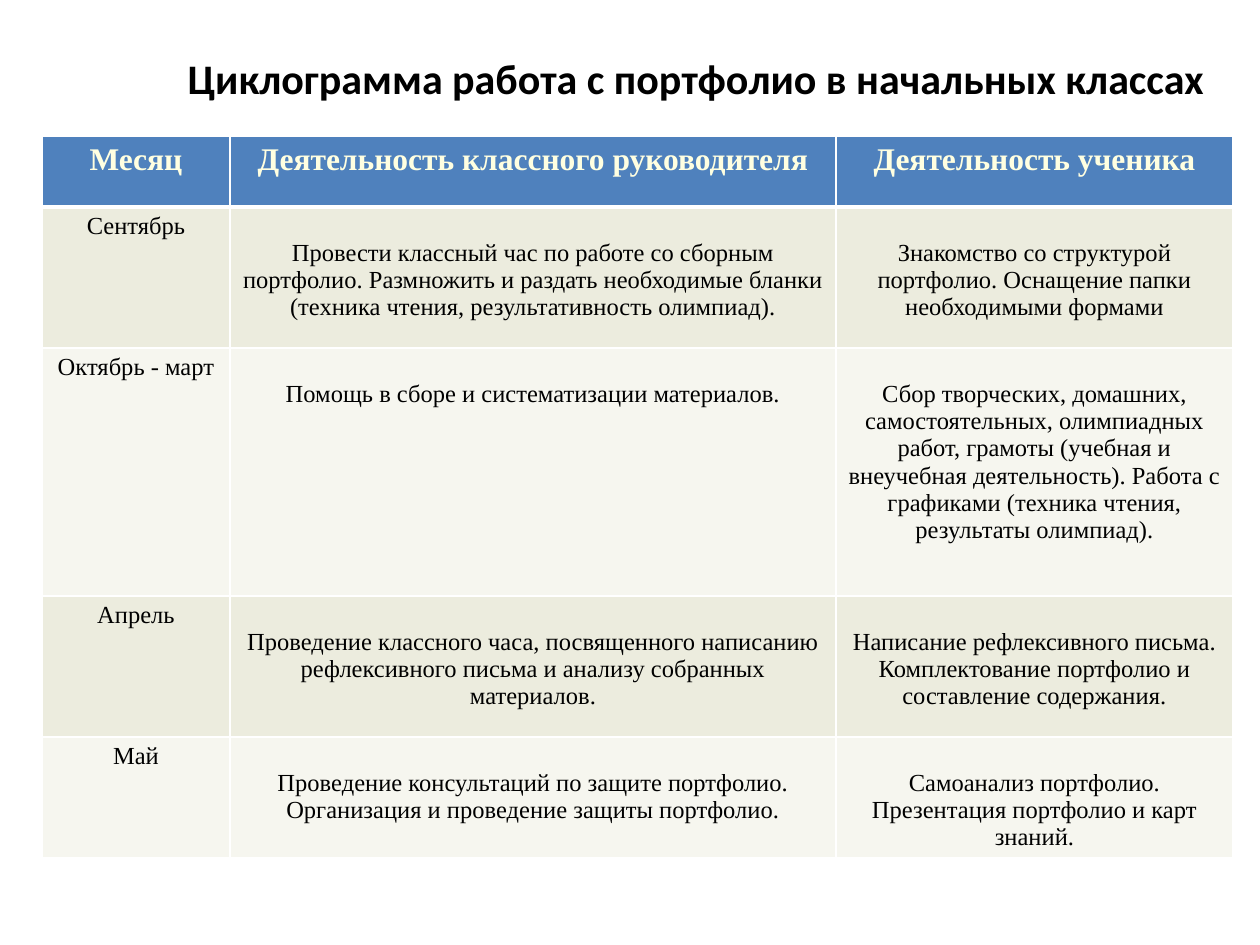
from dataclasses import dataclass
from lxml.etree import SubElement
from pptx import Presentation
from pptx.dml.color import RGBColor
from pptx.enum.text import MSO_ANCHOR, PP_ALIGN
from pptx.oxml.ns import qn
from pptx.util import Emu, Pt

SCALE = 914400 / 126


@dataclass(frozen=True)
class Theme:
    title_font: str = "Calibri"
    table_font: str = "Times New Roman"
    title_size: int = 24
    head_size: int = 18
    body_size: int = 14
    ink: str = "000000"
    head_ink: str = "FFFFE1"
    head_fill: str = "4F81BD"
    bands: tuple = ("ECECDE", "F6F6EF")
    rule: str = "FFFFFF"
    thin: int = 1
    thick: int = 3


THEME = Theme()
TITLE = "Циклограмма работа с портфолио в начальных классах"
COLS = (188, 606, 397)
ROWS = (71, 141, 248, 141, 121)
PAD = 6
DROP = 33
CELLS = (
    ("Месяц", "Деятельность классного руководителя", "Деятельность ученика"),
    ("Сентябрь",
     "Провести классный час по работе со сборным портфолио. Размножить и раздать "
     "необходимые бланки (техника чтения, результативность олимпиад).",
     "Знакомство со структурой портфолио. Оснащение папки необходимыми формами"),
    ("Октябрь - март",
     "Помощь в сборе и систематизации материалов.",
     "Сбор творческих, домашних, самостоятельных, олимпиадных работ, грамоты (учебная "
     "и внеучебная деятельность). Работа с графиками (техника чтения, результаты олимпиад)."),
    ("Апрель",
     "Проведение классного часа, посвященного написанию рефлексивного письма и анализу "
     "собранных материалов.",
     "Написание рефлексивного письма. Комплектование портфолио и составление содержания."),
    ("Май",
     "Проведение консультаций по защите портфолио. Организация и проведение защиты портфолио.",
     "Самоанализ портфолио. Презентация портфолио и карт знаний."),
)


def px(n):
    return Emu(round(n * SCALE))


def write(frame, text, font, size, ink, bold):
    para = frame.paragraphs[0]
    para.alignment = PP_ALIGN.CENTER
    run = para.add_run()
    run.text = text
    run.font.name = font
    run.font.size = Pt(size)
    run.font.bold = bold
    run.font.color.rgb = RGBColor.from_string(ink)


def add_title(slide):
    title = slide.shapes.title
    title.left, title.top, title.width, title.height = map(px, (159, 29, 1074, 97))
    frame = title.text_frame
    frame.word_wrap = True
    frame.vertical_anchor = MSO_ANCHOR.MIDDLE
    write(frame, TITLE, THEME.title_font, THEME.title_size, THEME.ink, True)


def add_rules(cell, row):
    props = cell._tc.get_or_add_tcPr()
    thick = {0: "B", 1: "T"}.get(row)
    for side in "LRTB":
        width = THEME.thick if side == thick else THEME.thin
        line = SubElement(props, qn(f"a:ln{side}"), w=str(Pt(width)))
        fill = SubElement(line, qn("a:solidFill"))
        SubElement(fill, qn("a:srgbClr"), val=THEME.rule)


def fill_cell(cell, text, row, col):
    head = row == 0
    add_rules(cell, row)
    cell.fill.solid()
    color = THEME.head_fill if head else THEME.bands[(row - 1) % 2]
    cell.fill.fore_color.rgb = RGBColor.from_string(color)
    cell.margin_top = px(PAD if head or col == 0 else DROP)
    cell.margin_bottom = px(PAD)
    size = THEME.head_size if head else THEME.body_size
    ink = THEME.head_ink if head else THEME.ink
    write(cell.text_frame, text, THEME.table_font, size, ink, head)


def add_grid(slide):
    table = slide.shapes.add_table(
        len(ROWS), len(COLS), px(42), px(136), px(sum(COLS)), px(sum(ROWS))).table
    for col, width in zip(table.columns, COLS):
        col.width = px(width)
    for row, height in zip(table.rows, ROWS):
        row.height = px(height)
    for r, texts in enumerate(CELLS):
        for c, text in enumerate(texts):
            fill_cell(table.cell(r, c), text, r, c)


def main():
    deck = Presentation()
    deck.slide_width, deck.slide_height = px(1260), px(945)
    slide = deck.slides.add_slide(deck.slide_layouts[5])
    add_title(slide)
    add_grid(slide)
    deck.save("out.pptx")


if __name__ == "__main__":
    main()
